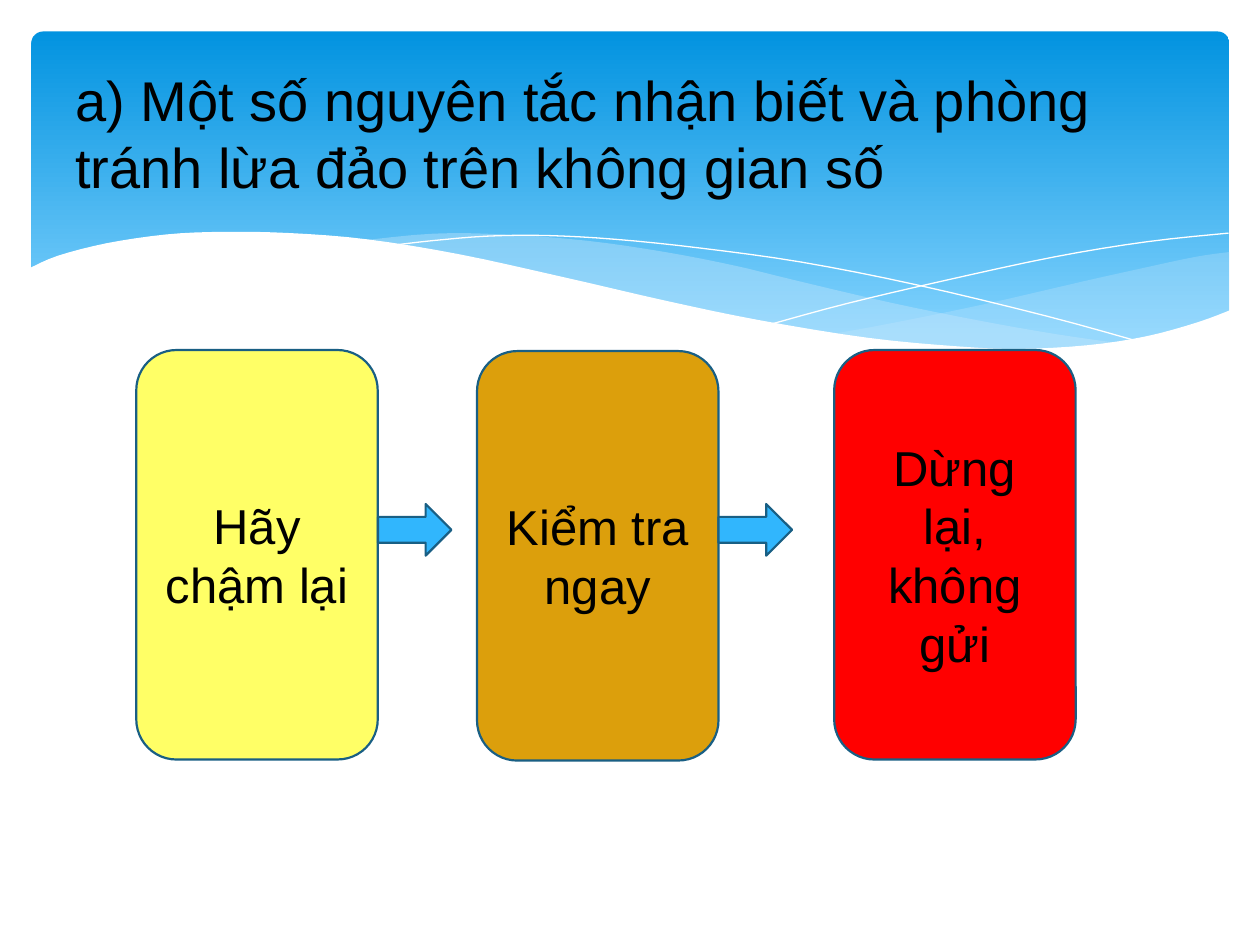
from lxml import etree
from pptx import Presentation
from pptx.dml.color import RGBColor
from pptx.enum import shapes, text
from pptx.oxml import ns
from pptx.util import Pt

BLACK = RGBColor(0x00, 0x00, 0x00)
WHITE = RGBColor(0xFF, 0xFF, 0xFF)
SKY_TOP = RGBColor(0x02, 0x93, 0xE0)
SKY_BOTTOM = RGBColor(0x83, 0xD3, 0xFE)
MIST = RGBColor(0xC6, 0xE7, 0xFC)
OUTLINE = RGBColor(0x19, 0x5F, 0x84)
ARROW = RGBColor(0x31, 0xB6, 0xFD)
YELLOW = RGBColor(0xFF, 0xFF, 0x66)
OCHRE = RGBColor(0xDC, 0x9F, 0x0C)
RED = RGBColor(0xFF, 0x00, 0x00)

# Wave outlines as key points, joined by smooth curves
RIGHT_WAVE_TOP = [(702.7, 144), (682.6, 146.9), (652.3, 153.4), (620, 160.6),
                  (561, 174.2), (508, 185), (476, 190.8)]
RIGHT_WAVE_BOTTOM = [(476, 190.8), (517.7, 195.8), (553.7, 199), (586, 200),
                     (614.9, 198.7), (640, 195.8), (663, 191), (683.3, 185),
                     (702.7, 177.8)]
LEFT_WAVE_TOP = [(643, 196.6), (602.6, 190.8), (558, 182.9), (508.3, 172.8),
                 (452.9, 159.8), (420.5, 151.9), (380, 144), (335, 137.5),
                 (287, 133.9), (247.7, 133.5), (206, 137.5)]
LEFT_WAVE_BOTTOM = [(206, 137.5), (260.6, 146.2), (323.3, 159.8),
                    (381.6, 172.8), (432.7, 183.6), (479, 191.5),
                    (520, 197.3), (556.6, 199.5), (589, 200.2),
                    (617, 199.4), (643, 196.6)]
FALLING_LINE = [(222.5, 140.4), (247.7, 137.5), (278, 135), (311.8, 134.6),
                (352, 136.8), (400.3, 141.8), (457.9, 149.8),
                (523.4, 162.7), (598.3, 180.7), (653, 195.8)]
RISING_LINE = [(441.4, 185), (483.8, 173.5), (538.6, 160.6), (602, 146.9),
               (655, 138.2), (702, 133.2)]
WHITE_WAVE_TOP = [(16.6, 153.4), (33, 146.2), (61, 139), (95, 134),
                  (127.4, 132.5), (165.6, 133.2), (210, 136.8),
                  (262.8, 145.4), (322, 158.4), (381, 172), (434, 183),
                  (495.4, 193), (548, 198), (582.5, 199.4), (621.4, 197.3),
                  (655, 192.2), (684, 184.3), (703.4, 177.1)]
WHITE_WAVE_BASE = [(703.4, 237), (16.6, 237)]


def smooth(points, steps=4):
    """Catmull-Rom curve through the points."""
    padded = [points[0], *points, points[-1]]
    curve = [points[0]]
    for a, b, c, d in zip(padded, padded[1:], padded[2:], padded[3:]):
        for step in range(1, steps + 1):
            t = step / steps
            curve.append(tuple(
                (2 * q + (r - p) * t + (2 * p - 5 * q + 4 * r - s) * t ** 2
                 + (3 * q - p - 3 * r + s) * t ** 3) / 2
                for p, q, r, s in zip(a, b, c, d)))
    return curve


class SlideBuilder:
    font = "Arial"
    border = 1.25

    def __init__(self, slide):
        self.shapes = slide.shapes

    def set_text(self, frame, words, size, align):
        frame.word_wrap = True
        frame.vertical_anchor = text.MSO_ANCHOR.MIDDLE
        paragraph = frame.paragraphs[0]
        paragraph.text = words
        paragraph.alignment = align
        paragraph.font.name = self.font
        paragraph.font.size = Pt(size)
        paragraph.font.color.rgb = BLACK

    def title(self, box, words):
        frame = self.shapes.add_textbox(*map(Pt, box)).text_frame
        self.set_text(frame, words, 32, text.PP_ALIGN.LEFT)

    def preset(self, kind, box, color):
        shape = self.shapes.add_shape(kind, *map(Pt, box))
        shape.shadow.inherit = False
        shape.fill.solid()
        shape.fill.fore_color.rgb = color
        shape.line.color.rgb = OUTLINE
        shape.line.width = Pt(self.border)
        return shape

    def card(self, box, color, words):
        shape = self.preset(shapes.MSO_SHAPE.ROUNDED_RECTANGLE, box, color)
        self.set_text(shape.text_frame, words, 28, text.PP_ALIGN.CENTER)

    def arrow(self, box):
        self.preset(shapes.MSO_SHAPE.RIGHT_ARROW, box, ARROW)

    def banner(self, box):
        shape = self.preset(shapes.MSO_SHAPE.ROUNDED_RECTANGLE, box, SKY_TOP)
        shape.adjustments[0] = 0.034
        shape.line.fill.background()
        shape.fill.gradient()
        shape.fill.gradient_angle = 270
        stops = zip(shape.fill.gradient_stops, (SKY_TOP, SKY_BOTTOM), (0, 0.9))
        for stop, color, position in stops:
            stop.color.rgb = color
            stop.position = position

    def outline(self, points, close):
        start, *rest = [(Pt(x), Pt(y)) for x, y in points]
        builder = self.shapes.build_freeform(*start)
        builder.add_line_segments(rest, close=close)
        shape = builder.convert_to_shape()
        shape.shadow.inherit = False
        return shape

    def wave(self, points, color, opacity=100):
        shape = self.outline(points, close=True)
        shape.line.fill.background()
        shape.fill.solid()
        shape.fill.fore_color.rgb = color
        if opacity < 100:
            tint = shape.element.spPr.find(".//" + ns.qn("a:srgbClr"))
            etree.SubElement(tint, ns.qn("a:alpha"), val=str(opacity * 1000))

    def hairline(self, points):
        shape = self.outline(points, close=False)
        shape.fill.background()
        shape.line.color.rgb = WHITE
        shape.line.width = Pt(0)


def main():
    deck = Presentation()
    deck.slide_width, deck.slide_height = Pt(720), Pt(540)
    page = SlideBuilder(deck.slides.add_slide(deck.slide_layouts[6]))

    # Blue banner with waves
    page.banner((18, 18, 684.5, 194.4))
    page.wave(smooth(RIGHT_WAVE_TOP) + smooth(RIGHT_WAVE_BOTTOM), MIST, 29)
    page.wave(smooth(LEFT_WAVE_TOP) + smooth(LEFT_WAVE_BOTTOM), MIST, 40)
    page.hairline(smooth(FALLING_LINE))
    page.hairline(smooth(RISING_LINE))
    page.wave(smooth(WHITE_WAVE_TOP) + WHITE_WAVE_BASE, WHITE)

    # Title
    page.title((36, 26.6, 648, 98.6),
               "a) Một số nguyên tắc nhận biết và phòng tránh lừa đảo "
               "trên không gian số")

    # Three principles
    for left, top, color, words in (
            (77.9, 200, YELLOW, "Hãy chậm lại"),
            (272.6, 200.6, OCHRE, "Kiểm tra ngay"),
            (476.7, 200, RED, "Dừng lại, không gửi")):
        page.card((left, top, 138, 234), color, words)

    # Arrows between the principles
    for left in (216, 410.6):
        page.arrow((left, 288, 42, 29.5))

    deck.save("out.pptx")


if __name__ == "__main__":
    main()
